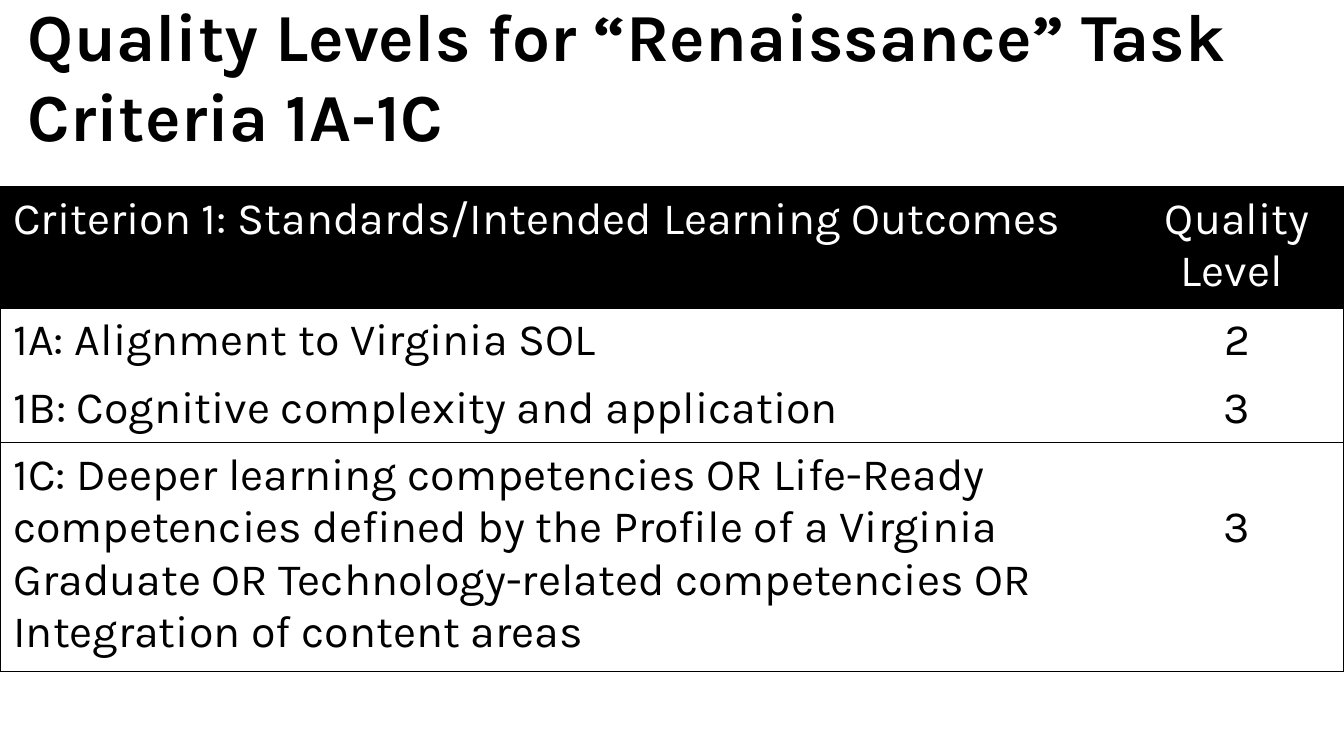
from dataclasses import dataclass

from lxml.etree import SubElement as Sub
from pptx import Presentation as Deck
from pptx.dml.color import RGBColor as Rgb
from pptx.enum.text import MSO_ANCHOR as Anchor, PP_ALIGN as Align
from pptx.oxml.ns import qn
from pptx.util import Cm, Pt

HUES = {"ink": "000000", "paper": "FFFFFF"}
BODY = {"name": "Karla", "size": Pt(24), "bold": False}
HEAD = {**BODY, "size": Pt(36), "bold": True}
COLS = (21.36, 4.04)


@dataclass
class Row:
    label: str
    level: str
    high: float
    ink: str = "ink"
    fill: str = "paper"
    drop: float = 0.13  # top margin of the level cell
    edges: str = ""     # ruled sides across the whole row


ROWS = [
    Row("Criterion 1: Standards/Intended Learning Outcomes", "Quality Level ",
        2.25, "paper", "ink", edges="TB"),
    Row("1A: Alignment to Virginia SOL", "2", 1.24, edges="T"),
    Row("1B: Cognitive complexity and application", "3", 1.24, edges="B"),
    Row("1C: Deeper learning competencies OR Life-Ready competencies defined "
        "by the Profile of a Virginia Graduate OR Technology-related "
        "competencies OR Integration of content areas", "3", 4.22,
        drop=1.12, edges="TB"),
]


def write(frame, text: str, form: dict, ink: str, align=Align.LEFT) -> None:
    para = frame.paragraphs[0]
    para.alignment = align
    run = para.add_run()
    run.text = text
    for key, val in form.items():
        setattr(run.font, key, val)
    run.font.color.rgb = Rgb.from_string(HUES[ink])


def rule(cell, edges: str) -> None:
    """Draw the named sides of a cell and clear the others."""
    props = cell._tc.get_or_add_tcPr()
    for spot, side in enumerate("LRTB"):
        line = Sub(props, qn(f"a:ln{side}"), w=str(Pt(0.75)))
        if side in edges:
            fill = Sub(line, qn("a:solidFill"))
            Sub(fill, qn("a:srgbClr"), val=HUES["ink"])
        else:
            Sub(line, qn("a:noFill"))
        props.insert(spot, line)


def draw_row(table, num: int, row: Row) -> None:
    table.rows[num].height = Cm(row.high)
    sides = ((row.label, Align.LEFT, "L", 0.13),
             (row.level, Align.CENTER, "R", row.drop))
    for col, (text, align, side, top) in enumerate(sides):
        cell = table.cell(num, col)
        cell.margin_top = Cm(top)
        cell.fill.solid()
        cell.fill.fore_color.rgb = Rgb.from_string(HUES[row.fill])
        write(cell.text_frame, text, BODY, row.ink, align)
        rule(cell, row.edges + side)


def main() -> None:
    deck = Deck()
    deck.slide_width, deck.slide_height = Cm(25.4), Cm(14.29)
    slide = deck.slides.add_slide(deck.slide_layouts[6])

    # Title
    box = slide.shapes.add_textbox(Cm(0.28), Cm(-0.23), Cm(23.8), Cm(3.28))
    frame = box.text_frame
    frame.word_wrap = True
    frame.vertical_anchor = Anchor.MIDDLE
    write(frame, "Quality Levels for “Renaissance” Task Criteria 1A-1C",
          HEAD, "ink")

    # Table of criteria
    high = sum(row.high for row in ROWS)
    table = slide.shapes.add_table(len(ROWS), len(COLS), Cm(0), Cm(3.53),
                                   Cm(sum(COLS)), Cm(high)).table
    table.first_row = table.horz_banding = False
    for col, wide in zip(table.columns, COLS):
        col.width = Cm(wide)
    for num, row in enumerate(ROWS):
        draw_row(table, num, row)

    deck.save("out.pptx")


if __name__ == "__main__":
    main()
